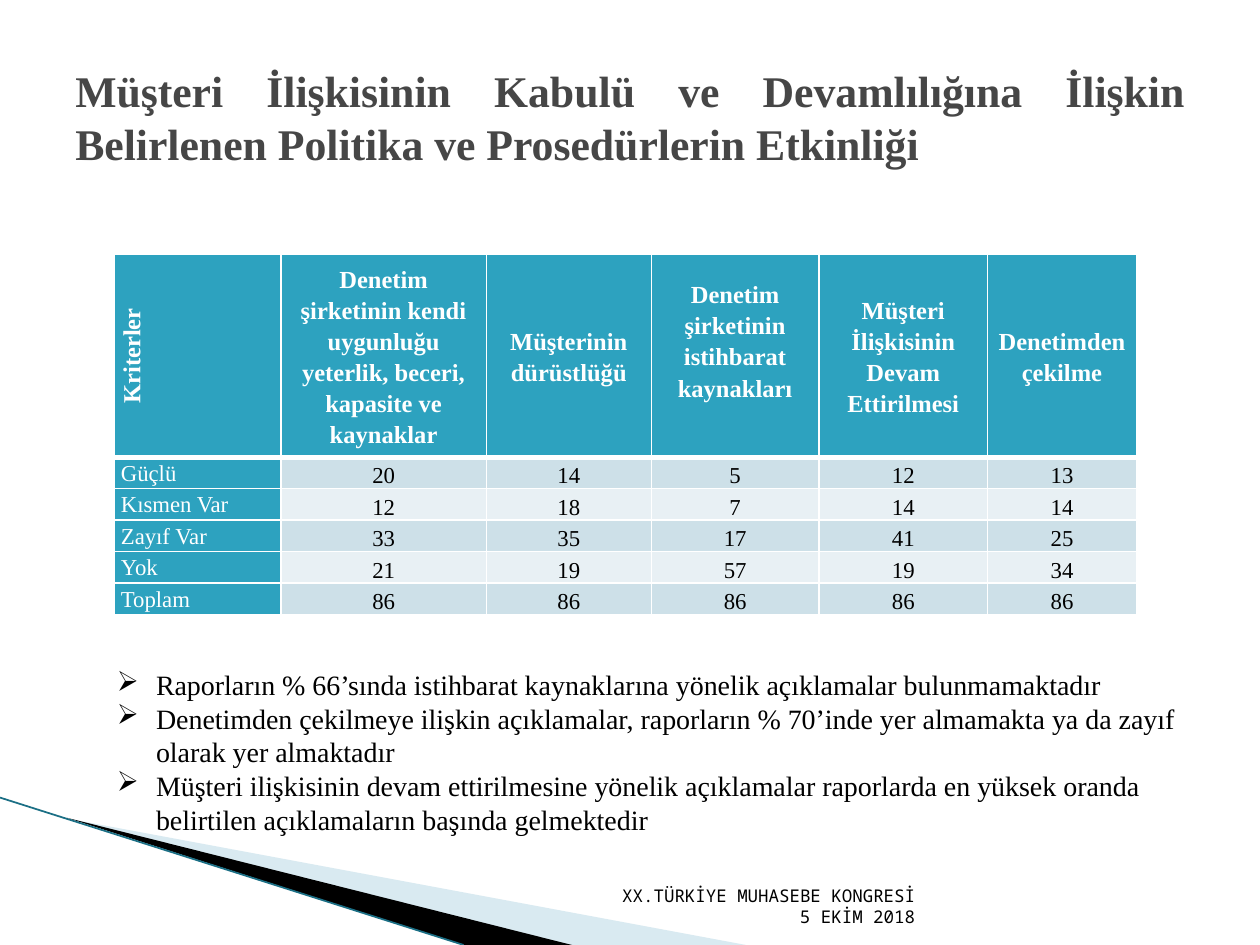
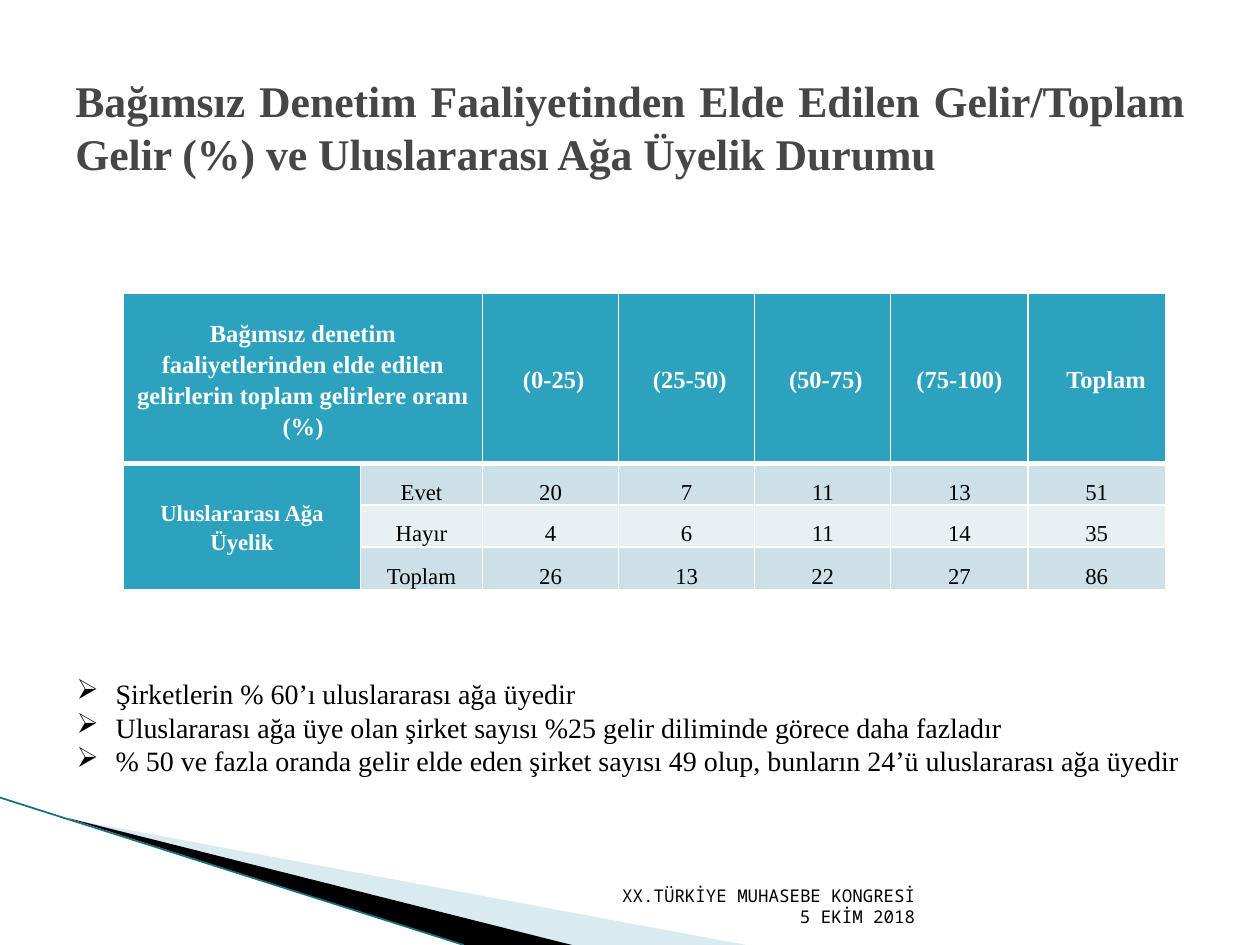
from lxml import etree
from pptx import Presentation
from pptx import util as u
from pptx.dml.color import RGBColor
from pptx.enum import shapes, text
from pptx.oxml.ns import qn

TEAL, LIGHT, PALE = "2DA2BF", "CDE0E8", "E8F0F4"
WHITE, BLACK, GREY = "FFFFFF", "000000", "464646"
SERIF, MONO = "Times New Roman", "Noto Sans Mono"
LEFT, CENTER, RIGHT, JUSTIFY = (
    text.PP_ALIGN.LEFT, text.PP_ALIGN.CENTER, text.PP_ALIGN.RIGHT, text.PP_ALIGN.JUSTIFY)
TOP, MIDDLE, BOTTOM = text.MSO_ANCHOR.TOP, text.MSO_ANCHOR.MIDDLE, text.MSO_ANCHOR.BOTTOM

presentation = Presentation()
presentation.slide_width = u.Inches(10)
presentation.slide_height = u.Inches(7.5)
unit = presentation.slide_width // 10  # the grid is 10 columns by 7.5 rows


def color(value):
    return RGBColor.from_string(value)


def write(frame, lines, align, ink, font, spacing=1.0, bullet=None):
    """Fill a text frame with one paragraph per line."""
    frame.word_wrap = True
    for index, line in enumerate(lines):
        paragraph = frame.paragraphs[0] if index == 0 else frame.add_paragraph()
        paragraph.alignment = align
        paragraph.line_spacing = spacing
        if bullet:
            properties = paragraph._p.get_or_add_pPr()
            properties.set("marL", str(u.Inches(0.31)))
            properties.set("indent", str(-u.Inches(0.31)))
            etree.SubElement(properties, qn("a:buChar")).set("char", bullet)
        run = paragraph.add_run()
        run.text = line
        run.font.color.rgb = color(ink)
        for name, value in font.items():
            setattr(run.font, name, value)


# Shared look
title_font = dict(name=SERIF, size=u.Pt(25), bold=True)
header_font = dict(name=SERIF, size=u.Pt(14), bold=True)
body_font = dict(name=SERIF, size=u.Pt(13), bold=False)
note_font = dict(name=SERIF, size=u.Pt(16))
footer_font = dict(name=MONO, size=u.Pt(10))
wedges = [
    ([(0.55, 6.5), (5.92, 7.5), (4.53, 7.5)], "A0CBDC", 40),
    ([(0.53, 6.49), (4.54, 7.5), (3.68, 7.5)], BLACK, 100),
]

# Content; a header cell is (text, extra left margin, extra bottom margin)
pages = [
    dict(
        title="Müşteri İlişkisinin Kabulü ve Devamlılığına İlişkin Belirlenen "
              "Politika ve Prosedürlerin Etkinliği",
        title_top=0.3,
        table_at=(0.91, 2.02),
        columns=[1.32, 1.63, 1.31, 1.33, 1.34, 1.18],
        rows=[1.47, 0.24, 0.24, 0.25, 0.25, 0.25],
        header=[("Kriterler", 0, 0),
                ("Denetim şirketinin kendi uygunluğu yeterlik, beceri, kapasite ve kaynaklar", 0, 0),
                ("Müşterinin dürüstlüğü", 0, 0),
                ("Denetim şirketinin istihbarat kaynakları", 0, 0.25),
                ("Müşteri İlişkisinin Devam Ettirilmesi", 0, 0),
                ("Denetimden çekilme", 0, 0)],
        body=[["Güçlü", 20, 14, 5, 12, 13],
              ["Kısmen Var", 12, 18, 7, 14, 14],
              ["Zayıf Var", 33, 35, 17, 41, 25],
              ["Yok", 21, 19, 57, 19, 34],
              ["Toplam", 86, 86, 86, 86, 86]],
        label_style=(LEFT, TOP, False),
        merges=[],
        upright_header=True,
        notes_at=(0.83, 5.25, 8.82, 1.45),
        notes=["Raporların % 66’sında istihbarat kaynaklarına yönelik açıklamalar bulunmamaktadır",
               "Denetimden çekilmeye ilişkin açıklamalar, raporların % 70’inde yer almamakta "
               "ya da zayıf olarak yer almaktadır",
               "Müşteri ilişkisinin devam ettirilmesine yönelik açıklamalar raporlarda en yüksek "
               "oranda belirtilen açıklamaların başında gelmektedir"],
    ),
    dict(
        title="Bağımsız Denetim Faaliyetinden Elde Edilen Gelir/Toplam Gelir (%) ve "
              "Uluslararası Ağa Üyelik Durumu",
        title_top=0.38,
        table_at=(0.98, 2.33),
        columns=[1.88, 0.97, 1.08, 1.08, 1.08, 1.09, 1.09],
        rows=[1.35, 0.33, 0.33, 0.34],
        header=[("Bağımsız denetim faaliyetlerinden elde edilen gelirlerin toplam gelirlere "
                 "oranı (%)", 0, 0),
                ("", 0, 0), ("(0-25)", 0.05, 0), ("(25-50)", 0.05, 0), ("(50-75)", 0.05, 0),
                ("(75-100)", 0, 0), ("Toplam", 0.15, 0)],
        body=[["Uluslararası Ağa Üyelik", "Evet", 20, 7, 11, 13, 51],
              ["", "Hayır", 4, 6, 11, 14, 35],
              ["", "Toplam", 26, 13, 22, 27, 86]],
        label_style=(CENTER, MIDDLE, True),
        merges=[((0, 0), (0, 1)), ((1, 0), (3, 0))],
        upright_header=False,
        notes_at=(0.51, 5.32, 9.21, 0.91),
        notes=["Şirketlerin % 60’ı uluslararası ağa üyedir",
               "Uluslararası ağa üye olan şirket sayısı %25 gelir diliminde görece daha fazladır",
               "% 50 ve fazla oranda gelir elde eden şirket sayısı 49 olup, bunların 24’ü "
               "uluslararası ağa üyedir"],
    ),
]

for page in pages:
    slide = presentation.slides.add_slide(presentation.slide_layouts[6])

    # Corner wedges
    for points, fill, opacity in wedges:
        corners = [(int(x * unit), int(y * unit)) for x, y in points]
        builder = slide.shapes.build_freeform(*corners[0])
        builder.add_line_segments(corners[1:])
        wedge = builder.convert_to_shape()
        wedge.shadow.inherit = False
        wedge.fill.solid()
        wedge.fill.fore_color.rgb = color(fill)
        wedge.line.fill.background()
        tint = wedge._element.spPr.find(qn("a:solidFill"))[0]
        etree.SubElement(tint, qn("a:alpha")).set("val", str(opacity * 1000))
    edge = slide.shapes.add_connector(
        shapes.MSO_CONNECTOR.STRAIGHT, 0, int(6.33 * unit), int(3.68 * unit), int(7.5 * unit))
    edge.line.color.rgb = color("1B6F85")
    edge.line.width = u.Pt(1)
    etree.SubElement(edge._element.spPr, qn("a:effectLst"))

    # Footer, title and notes
    for box, lines, anchor, style in [
        ((4.79, 7.01, 2.57, 0.4), ["XX.TÜRKİYE MUHASEBE KONGRESİ 5 EKİM 2018"], BOTTOM,
         dict(align=RIGHT, ink=BLACK, font=footer_font)),
        ((0.5, page["title_top"], 9, 1.25), [page["title"]], MIDDLE,
         dict(align=JUSTIFY, ink=GREY, font=title_font)),
        (page["notes_at"], page["notes"], TOP,
         dict(align=LEFT, ink=BLACK, font=note_font, bullet="➢")),
    ]:
        frame = slide.shapes.add_textbox(*(int(side * unit) for side in box)).text_frame
        frame.vertical_anchor = anchor
        write(frame, lines, **style)

    # Table grid
    columns, rows = page["columns"], page["rows"]
    left, top = page["table_at"]
    table = slide.shapes.add_table(
        len(rows), len(columns), int(left * unit), int(top * unit),
        int(sum(columns) * unit), int(sum(rows) * unit)).table
    for column, width in zip(table.columns, columns):
        column.width = int(width * unit)
    for row, height in zip(table.rows, rows):
        row.height = int(height * unit)
    for first, last in page["merges"]:
        table.cell(*first).merge(table.cell(*last))

    # Table cells
    label_align, label_anchor, label_bold = page["label_style"]
    body = [[(value, 0, 0) for value in values] for values in page["body"]]
    for r, values in enumerate([page["header"]] + body):
        for c, (value, extra_left, extra_bottom) in enumerate(values):
            cell = table.cell(r, c)
            if r == 0:
                fill, ink, font, align, anchor = TEAL, WHITE, header_font, CENTER, MIDDLE
            elif c == 0:
                font = dict(body_font, bold=label_bold)
                fill, ink, align, anchor = TEAL, WHITE, label_align, label_anchor
            else:
                fill, ink = (LIGHT if r % 2 else PALE), BLACK
                font, align, anchor = body_font, CENTER, BOTTOM
            for name, value_set in dict(
                    margin_left=u.Inches(0.05 + extra_left), margin_right=u.Inches(0.05),
                    margin_top=0, margin_bottom=u.Inches(extra_bottom),
                    vertical_anchor=anchor).items():
                setattr(cell, name, value_set)
            properties = cell._tc.get_or_add_tcPr()
            for side in "LRTB":
                thick = (r, side) in [(0, "B"), (1, "T")]
                border = etree.SubElement(properties, qn(f"a:ln{side}"))
                border.set("w", str(u.Pt(3 if thick else 1)))
                paint = etree.SubElement(border, qn("a:solidFill"))
                etree.SubElement(paint, qn("a:srgbClr")).set("val", WHITE)
            cell.fill.solid()
            cell.fill.fore_color.rgb = color(fill)
            if not cell.is_spanned:
                write(cell.text_frame, [str(value)], align, ink, font, spacing=1.15)
    if page["upright_header"]:
        table.cell(0, 0)._tc.tcPr.set("vert", "vert270")

presentation.save("out.pptx")
